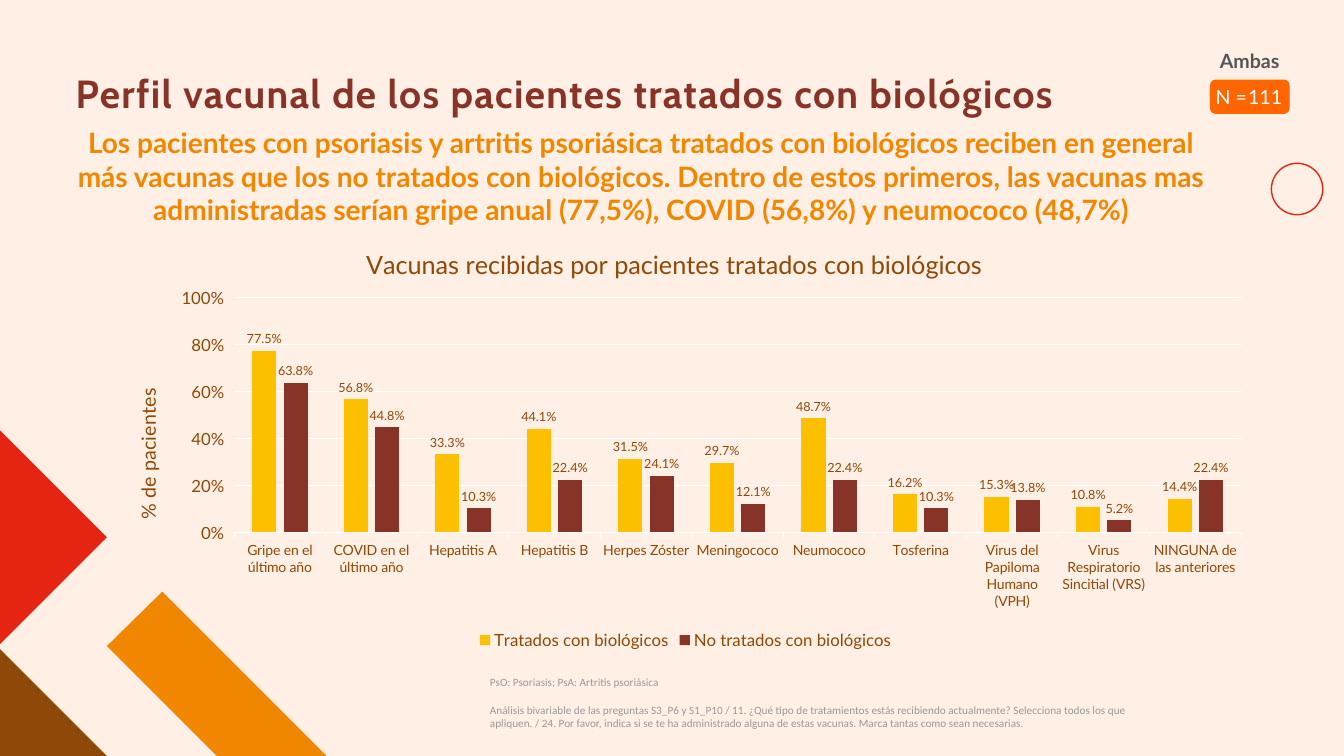
from lxml.etree import SubElement
from pptx import Presentation
from pptx.chart.data import CategoryChartData
from pptx.dml.color import RGBColor
from pptx.enum.chart import XL_CHART_TYPE, XL_LABEL_POSITION, XL_LEGEND_POSITION, XL_TICK_MARK
from pptx.enum.shapes import MSO_SHAPE
from pptx.enum.text import MSO_ANCHOR, MSO_AUTO_SIZE, PP_ALIGN
from pptx.oxml import parse_xml
from pptx.oxml.ns import nsdecls, qn
from pptx.util import Inches, Pt

COLORS = {
    "background": "FFEFE5", "red": "E52512", "orange": "F18700", "brown": "8F4807",
    "badge": "FF6600", "maroon": "883328", "yellow": "FCC000", "gray": "575555",
    "note": "9B9898", "white": "FFFFFF",
}
VACCINES = [
    "Gripe en el último año", "COVID en el último año", "Hepatitis A", "Hepatitis B",
    "Herpes Zóster", "Meningococo", "Neumococo", "Tosferina",
    "Virus del Papiloma Humano (VPH)", "Virus Respiratorio Sincitial (VRS)",
    "NINGUNA de las anteriores",
]
GROUPS = [
    ("Tratados con biológicos", "yellow",
     [.775, .568, .333, .441, .315, .297, .487, .162, .153, .108, .144]),
    ("No tratados con biológicos", "maroon",
     [.638, .448, .103, .224, .241, .121, .224, .103, .138, .052, .224]),
]


def rgb(color):
    return RGBColor.from_string(COLORS[color])


def box(left, top, width, height):
    return [Inches(value) for value in (left, top, width, height)]


def set_layout(element, index, **fractions):
    """Place a chart part at fractions of the chart area; the plot area also takes w and h."""
    for previous in element.findall(qn("c:layout")):
        element.remove(previous)
    layout = parse_xml(f"<c:layout {nsdecls('c')}><c:manualLayout/></c:layout>")
    manual = layout[0]
    if "w" in fractions:
        SubElement(manual, qn("c:layoutTarget")).set("val", "inner")
    for mode in ("xMode", "yMode"):
        SubElement(manual, qn(f"c:{mode}")).set("val", "edge")
    for name, value in fractions.items():
        SubElement(manual, qn(f"c:{name}")).set("val", str(value))
    element.insert(index, layout)


class SlideBuilder:
    def __init__(self, slide, font="Lato"):
        self.slide = slide
        self.font_name = font
        slide.background.fill.solid()
        slide.background.fill.fore_color.rgb = rgb("background")

    def style(self, font, size, color, bold=False, name=None):
        font.name = name or self.font_name
        font.size = Pt(size)
        font.bold = bold
        font.color.rgb = rgb(color)

    def paint(self, shape, fill=None, line=None):
        shape.shadow.inherit = False
        if fill:
            shape.fill.solid()
            shape.fill.fore_color.rgb = rgb(fill)
        else:
            shape.fill.background()
        if line:
            shape.line.color.rgb = rgb(line)
            shape.line.width = Pt(1)
        else:
            shape.line.fill.background()

    def polygon(self, points, fill):
        corners = [(Inches(x), Inches(y)) for x, y in points]
        builder = self.slide.shapes.build_freeform(*corners[0])
        builder.add_line_segments(corners[1:], close=True)
        self.paint(builder.convert_to_shape(), fill)

    def preset(self, kind, area, fill=None, line=None):
        shape = self.slide.shapes.add_shape(kind, *box(*area))
        self.paint(shape, fill, line)
        return shape

    def set_text(self, shape, paragraphs, size, color, area=None, bold=False, name=None,
                 align=PP_ALIGN.LEFT, insets=(0, 0, 0, 0), before=0, after=0,
                 line_spacing=1.0, tracking=0):
        """Fill a shape with one run per paragraph; area moves it, tracking is in points."""
        if area:
            shape.left, shape.top, shape.width, shape.height = box(*area)
        frame = shape.text_frame
        frame.word_wrap = True
        frame.auto_size = MSO_AUTO_SIZE.NONE
        frame.vertical_anchor = MSO_ANCHOR.MIDDLE
        (frame.margin_left, frame.margin_top,
         frame.margin_right, frame.margin_bottom) = box(*insets)
        for index, text in enumerate(paragraphs):
            paragraph = frame.add_paragraph() if index else frame.paragraphs[0]
            paragraph.alignment = align
            paragraph.line_spacing = line_spacing
            paragraph.space_before = Pt(before)
            paragraph.space_after = Pt(after if index < len(paragraphs) - 1 else 0)
            run = paragraph.add_run()
            run.text = text
            self.style(run.font, size, color, bold, name)
            if tracking:
                run.font._element.set("spc", str(tracking * 100))

    def chart_title(self, title, text, size, x, y):
        run = title.text_frame.paragraphs[0].add_run()
        run.text = text
        self.style(run.font, size, "brown")
        set_layout(title._element, 1, x=x, y=y)

    def column_chart(self, area, title, axis_title, categories, groups):
        data = CategoryChartData(number_format="0.0%")
        data.categories = categories
        for name, _, values in groups:
            data.add_series(name, values)
        chart = self.slide.shapes.add_chart(
            XL_CHART_TYPE.COLUMN_CLUSTERED, *box(*area), data).chart
        self.style(chart.font, 10, "brown")
        chart.has_title = True
        self.chart_title(chart.chart_title, title, 18, .22, .05)
        chart.has_legend = True
        chart.legend.position = XL_LEGEND_POSITION.BOTTOM
        chart.legend.include_in_layout = False
        self.style(chart.legend.font, 12, "brown")

        plot = chart.plots[0]
        plot.gap_width, plot.overlap, plot.vary_by_categories = 150, -30, False
        for series, (_, color, _) in zip(plot.series, groups):
            series.format.fill.solid()
            series.format.fill.fore_color.rgb = rgb(color)
            labels = series.data_labels
            labels.show_value = True
            labels.position = XL_LABEL_POSITION.OUTSIDE_END
            labels.number_format, labels.number_format_is_linked = "0.0%", False
            self.style(labels.font, 9, "brown")

        vaccines, share = chart.category_axis, chart.value_axis
        for axis, size in ((vaccines, 10), (share, 12)):
            axis.major_tick_mark = XL_TICK_MARK.OUTSIDE
            self.style(axis.tick_labels.font, size, "brown")
        share.minimum_scale, share.maximum_scale, share.major_unit = 0, 1, .2
        share.tick_labels.number_format = "0%"
        share.tick_labels.number_format_is_linked = False
        share.format.line.fill.background()
        for line in (vaccines.format.line, share.major_gridlines.format.line):
            line.color.rgb = rgb("white")
            line.width = Pt(.75)
        share.has_title = True
        self.chart_title(share.axis_title, axis_title, 14, .02, .38)
        share.axis_title.text_frame._txBody.bodyPr.set("rot", "-5400000")
        set_layout(chart._chartSpace.chart.plotArea, 0, x=.11, y=.18, w=.87, h=.54)


def main():
    presentation = Presentation()
    presentation.slide_width, presentation.slide_height = Inches(13.33), Inches(7.5)
    slide = presentation.slides.add_slide(presentation.slide_layouts[4])
    summary, notes = slide.placeholders[1], slide.placeholders[3]
    for index in (2, 4):
        unused = slide.placeholders[index]._element
        unused.getparent().remove(unused)
    builder = SlideBuilder(slide)

    builder.polygon([(3.24, 7.5), (2.15, 7.5), (1.06, 6.41), (1.61, 5.87)], "orange")
    builder.polygon([(1.06, 7.5), (0, 7.5), (0, 6.44)], "brown")
    builder.polygon([(0, 4.27), (1.06, 5.33), (0, 6.39)], "red")
    builder.preset(MSO_SHAPE.OVAL, (12.61, 1.62, .51, .51), line="red")

    badge = builder.preset(MSO_SHAPE.ROUNDED_RECTANGLE, (12, .79, .79, .34), "badge")
    builder.set_text(badge, ["N ="], 14, "white", insets=(.04, .05, .1, .05))
    cohort = builder.preset(MSO_SHAPE.ROUNDED_RECTANGLE, (12, .43, .79, .34))
    builder.set_text(cohort, ["Ambas"], 14, "gray", bold=True, align=PP_ALIGN.CENTER,
                     insets=(0, .05, 0, .05))
    sample_size = slide.shapes.add_textbox(*box(12.28, .8, .61, .32))
    builder.set_text(sample_size, ["111"], 14, "white", insets=(.1, .05, .1, .05))

    builder.set_text(slide.shapes.title,
                     ["Perfil vacunal de los pacientes tratados con biológicos"],
                     28, "maroon", (.65, .6, 11.14, .72), bold=True, name="Cabin",
                     insets=(.1, .05, .1, .05), line_spacing=.8, tracking=1)
    builder.set_text(summary, [
        "Los pacientes con psoriasis y artritis psoriásica tratados con biológicos reciben "
        "en general más vacunas que los no tratados con biológicos. Dentro de estos "
        "primeros, las vacunas mas administradas serían gripe anual (77,5%), COVID (56,8%) "
        "y neumococo (48,7%)"],
        20, "orange", (.65, 1.37, 11.42, .75), bold=True, align=PP_ALIGN.CENTER, before=6)
    builder.column_chart((1.06, 2.18, 11.48, 4.31),
                         "Vacunas recibidas por pacientes tratados con biológicos",
                         "% de pacientes", VACCINES, GROUPS)
    builder.set_text(notes, [
        "PsO: Psoriasis; PsA: Artritis psoriásica",
        "Análisis bivariable de las preguntas S3_P6 y S1_P10 / 11. ¿Qué tipo de tratamientos "
        "estás recibiendo actualmente? Selecciona todos los que apliquen. / 24. Por favor, "
        "indica si se te ha administrado alguna de estas vacunas. Marca tantas como sean "
        "necesarias."],
        8, "note", (4.86, 6.8, 6.33, .34), name="Calibri", after=10)
    presentation.save("out.pptx")


if __name__ == "__main__":
    main()
